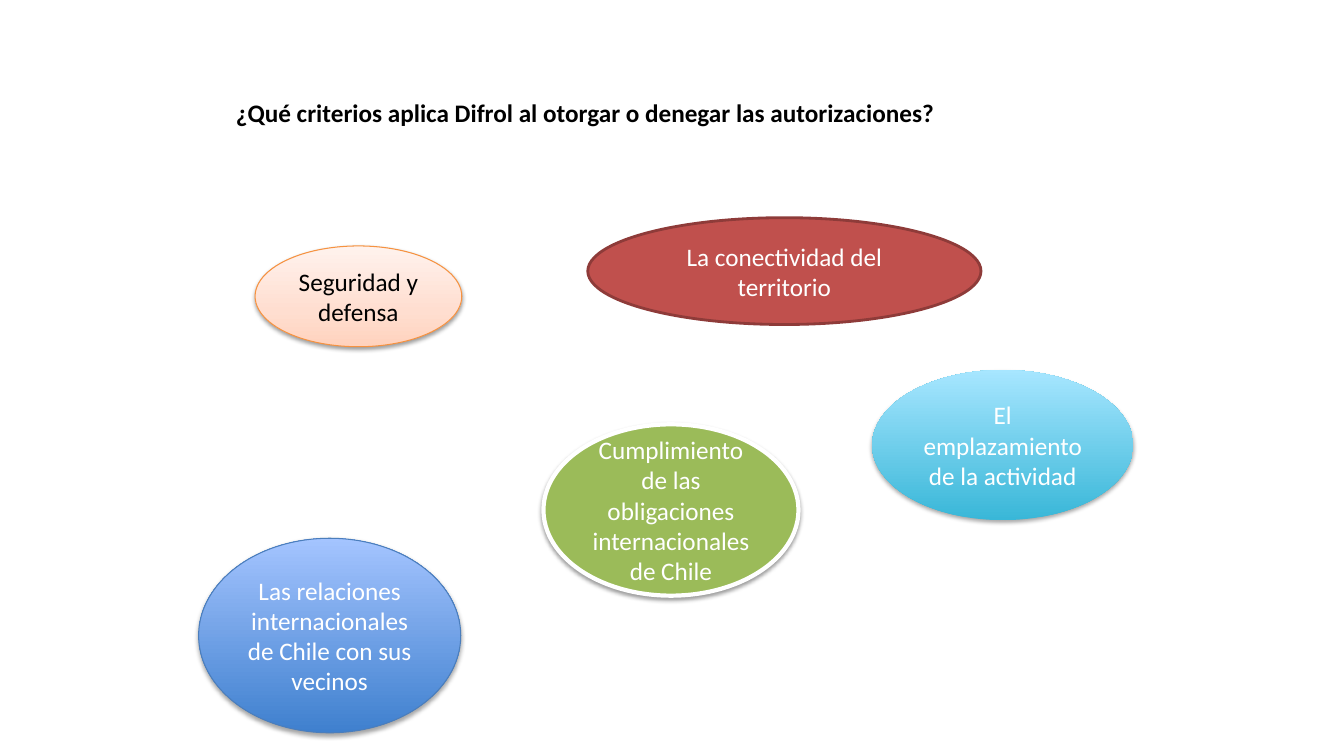
from copy import deepcopy
from dataclasses import dataclass
from typing import Any, Optional

from pptx import Presentation
from pptx.dml.color import RGBColor as RGB
from pptx.enum.shapes import MSO_SHAPE as Form
from pptx.enum.text import MSO_ANCHOR as Anchor, MSO_AUTO_SIZE as Fit, PP_ALIGN as Align
from pptx.oxml import parse_xml
from pptx.oxml.ns import nsdecls, qn
from pptx.util import Inches, Pt

HUES = {
    "black": "000000", "white": "FFFFFF", "green": "9BBB59", "red": "C0504D",
    "wine": "8E3B39", "orange": "F69240", "peach": "FFD2BD", "blush": "FFDED0",
    "cream": "FFF2ED", "blue": "3F80CE", "sky": "A4C4FF", "navy": "4B7EBC",
    "teal": "39B7D8", "aqua": "A7E6FF",
}
FONT = {"name": "Calibri", "size": Pt(18)}
FRAME = {"word_wrap": True, "vertical_anchor": Anchor.MIDDLE}
HEAD = {"word_wrap": True, "vertical_anchor": Anchor.TOP, "auto_size": Fit.SHAPE_TO_FIT_TEXT}


@dataclass(frozen=True)
class Shade:
    alpha: int
    dist: float


@dataclass(frozen=True)
class Oval:
    text: str
    box: tuple[float, float, float, float]
    fill: tuple[tuple[float, str], ...]
    edge: Optional[tuple[str, float]] = None
    shade: Optional[Shade] = None
    ink: str = "white"


SOFT = Shade(38, 1.6)
DEEP = Shade(35, 1.8)
OVALS = (
    Oval("Seguridad y defensa", (2.53, 2.44, 2.05, 1),
         ((0, "peach"), (0.35, "blush"), (1, "cream")), ("orange", 0.75), SOFT, "black"),
    Oval("Cumplimiento de las obligaciones internacionales de Chile",
         (5.39, 4.21, 2.53, 1.7), ((0, "green"),), ("white", 3), SOFT),
    Oval("Las relaciones internacionales de Chile con sus vecinos",
         (1.97, 5.34, 2.6, 1.93), ((0, "blue"), (1, "sky")), ("navy", 0.75), DEEP),
    Oval("La conectividad del territorio", (5.83, 2.16, 3.9, 1.06),
         ((0, "red"),), ("wine", 2)),
    Oval("El emplazamiento de la actividad", (8.65, 3.67, 2.59, 1.49),
         ((0, "teal"), (1, "aqua")), None, DEEP),
)


def hue(name: str) -> RGB:
    """Return the named colour."""
    return RGB.from_string(HUES[name])


def apply(item: Any, values: dict[str, Any]) -> None:
    """Set each format value on the item."""
    for key, value in values.items():
        setattr(item, key, value)


def write(shape: Any, text: str, ink: str, frame: dict, align: Align, bold: bool = False) -> None:
    """Put one formatted paragraph in the shape."""
    apply(shape.text_frame, frame)
    para = shape.text_frame.paragraphs[0]
    para.alignment = align
    run = para.add_run()
    run.text = text
    apply(run.font, FONT | {"bold": bold})
    run.font.color.rgb = hue(ink)


def paint(shape: Any, stops: tuple[tuple[float, str], ...]) -> None:
    """Fill with one colour, or with a gradient rising from the bottom."""
    fill = shape.fill
    if len(stops) == 1:
        fill.solid()
        fill.fore_color.rgb = hue(stops[0][1])
        return
    fill.gradient()
    fill.gradient_angle = 90
    row = shape._element.spPr.find(qn("a:gradFill")).find(qn("a:gsLst"))
    for _ in stops[2:]:
        row.append(deepcopy(row[0]))
    for stop, (place, name) in zip(fill.gradient_stops, stops):
        stop.position = place
        stop.color.rgb = hue(name)


def cast(shape: Any, shade: Shade) -> None:
    """Add a shadow that falls straight down."""
    shape._element.spPr.find(qn("a:effectLst")).append(parse_xml(
        f'<a:outerShdw {nsdecls("a")} blurRad="{Pt(3.1)}" dist="{Pt(shade.dist)}" '
        f'dir="5400000" rotWithShape="0"><a:srgbClr val="{HUES["black"]}">'
        f'<a:alpha val="{shade.alpha * 1000}"/></a:srgbClr></a:outerShdw>'))


def draw(slide: Any, oval: Oval) -> None:
    """Draw one criterion as an ellipse."""
    shape = slide.shapes.add_shape(Form.OVAL, *map(Inches, oval.box))
    shape.shadow.inherit = False
    paint(shape, oval.fill)
    if oval.edge:
        name, width = oval.edge
        shape.line.color.rgb = hue(name)
        shape.line.width = Pt(width)
    else:
        shape.line.fill.background()
    if oval.shade:
        cast(shape, oval.shade)
    write(shape, oval.text, oval.ink, FRAME, Align.CENTER)


def main() -> None:
    """Build and save the slide."""
    deck = Presentation()
    apply(deck, {"slide_width": Inches(13.33), "slide_height": Inches(7.5)})
    slide = deck.slides.add_slide(deck.slide_layouts[5])
    title = slide.shapes.title
    apply(title, {"left": Inches(2.24), "top": Inches(0.92),
                  "width": Inches(8.67), "height": Inches(0.71)})
    write(title, "¿Qué criterios aplica Difrol al otorgar o denegar las autorizaciones?",
          "black", HEAD, Align.LEFT, True)
    for oval in OVALS:
        draw(slide, oval)
    deck.save("out.pptx")


if __name__ == "__main__":
    main()
